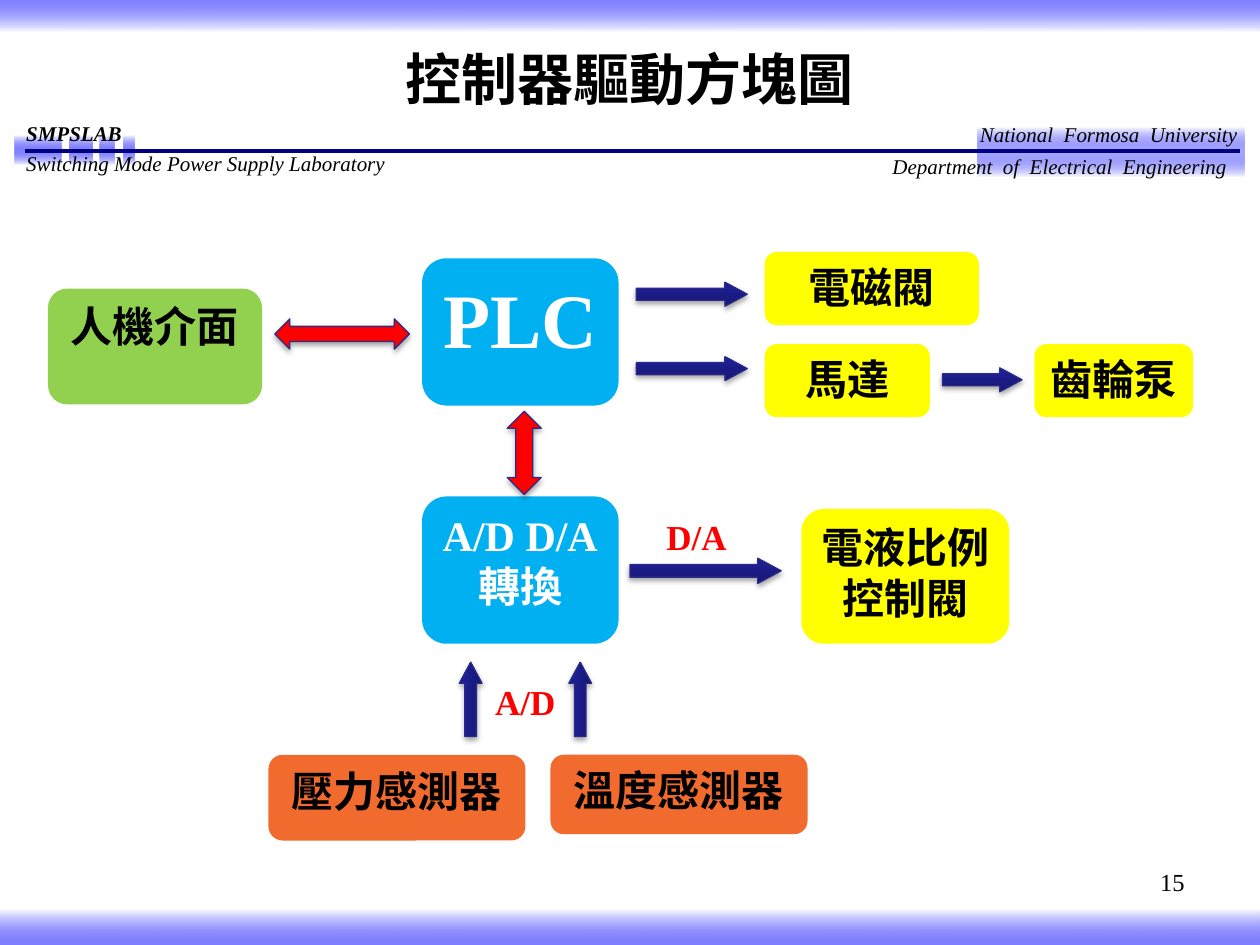
import pptx
import pptx.util
import pptx.dml.color
import pptx.enum.shapes
import pptx.enum.text
import pptx.oxml
import pptx.oxml.ns

Pt = pptx.util.Pt
SHAPE = pptx.enum.shapes.MSO_SHAPE
ALIGN = pptx.enum.text.PP_ALIGN
NAMESPACE = pptx.oxml.ns.nsdecls("a")


def color(value):
    return pptx.dml.color.RGBColor.from_string(value)


class Diagram:
    font = "Times New Roman"
    black, white, red = "000000", "FFFFFF", "FF0000"
    yellow, blue, green, orange = "FFFF00", "00B0F0", "92D050", "F16B2F"
    navy, outline = "000080", "2A2A89"
    pale = (0, "FBFBFF", 100)
    pale_end = (100, "FBFBFF", 100)
    arrow_stops = [(0, "171771", 100), (80, "1E1E93", 100), (100, "1C1C96", 100)]

    def __init__(self, page):
        self.page = page

    def shape(self, kind, frame, fill=None):
        shape = self.page.shapes.add_shape(kind, *map(Pt, frame))
        shape.shadow.inherit = False
        shape.line.fill.background()
        if fill:
            shape.fill.solid()
            shape.fill.fore_color.rgb = color(fill)
        return shape

    def gradient(self, shape, stops, angle):
        """Stops are (position %, colour, opacity %)."""
        shape.fill.gradient()
        shape.fill.gradient_angle = angle
        stop_list = shape.element.spPr.find(".//" + pptx.oxml.ns.qn("a:gsLst"))
        for stop in list(stop_list):
            stop_list.remove(stop)
        for position, value, opacity in stops:
            stop_list.append(pptx.oxml.parse_xml(
                f'<a:gs {NAMESPACE} pos="{position * 1000}"><a:srgbClr val="{value}">'
                f'<a:alpha val="{opacity * 1000}"/></a:srgbClr></a:gs>'))

    def band(self, frame, stops):
        self.gradient(self.shape(SHAPE.RECTANGLE, frame), stops, 270)

    def label(self, shape, lines, size, value, bold=False, italic=False,
              align=ALIGN.CENTER, spacing=None):
        frame = shape.text_frame
        frame.text = "\n".join(lines)
        frame.vertical_anchor = pptx.enum.text.MSO_ANCHOR.TOP
        for para in frame.paragraphs:
            para.alignment = align
            if spacing:
                para.line_spacing = spacing
            for span in para.runs:
                span.font.name = self.font
                span.font.size = Pt(size)
                span.font.bold = bold
                span.font.italic = italic
                span.font.color.rgb = color(value)
        return frame

    def text(self, frame, lines, size, value=black, wrap=True, **style):
        box = self.page.shapes.add_textbox(*map(Pt, frame))
        box.text_frame.word_wrap = wrap
        return self.label(box, lines, size, value, **style)

    def block(self, frame, name, fill, value=black, size=24):
        box = self.shape(SHAPE.FLOWCHART_ALTERNATE_PROCESS, frame, fill)
        box.text_frame.word_wrap = True
        box.text_frame.margin_left = box.text_frame.margin_right = Pt(6)
        self.label(box, [name], size, value, bold=True)

    def arrow(self, frame, rotation=0, double=False):
        kind = SHAPE.LEFT_RIGHT_ARROW if double else SHAPE.RIGHT_ARROW
        arrow = self.shape(kind, frame, self.red if double else None)
        if not double:
            arrow.adjustments[1] = 0.93
            self.gradient(arrow, self.arrow_stops, 90)
        arrow.rotation = rotation
        arrow.line.color.rgb = color(self.outline)
        arrow.line.width = Pt(0.75)
        effects = arrow.element.spPr.find(pptx.oxml.ns.qn("a:effectLst"))
        effects.append(pptx.oxml.parse_xml(
            f'<a:outerShdw {NAMESPACE} blurRad="{Pt(3.1)}" dist="{Pt(1.8)}" dir="5400000" '
            'rotWithShape="0"><a:srgbClr val="000000"><a:alpha val="35000"/></a:srgbClr>'
            '</a:outerShdw>'))

    def rule(self, left, right, top):
        line = self.page.shapes.add_connector(
            pptx.enum.shapes.MSO_CONNECTOR.STRAIGHT, Pt(left), Pt(top), Pt(right), Pt(top))
        line.line.color.rgb = color(self.navy)
        line.line.width = Pt(2)
        line.element.spPr.append(pptx.oxml.parse_xml(f"<a:effectLst {NAMESPACE}/>"))


def main():
    deck = pptx.Presentation()
    deck.slide_width, deck.slide_height = Pt(720), Pt(540)
    diagram = Diagram(deck.slides.add_slide(deck.slide_layouts[6]))
    pale, pale_end = diagram.pale, diagram.pale_end

    # Gradient bands
    for left, width in ((39.6, 13), (56.9, 8.6), (8.6, 26.6), (70.6, 6.5)):
        diagram.band((left, 77.8, width, 16.5), [pale, (50, "0000FF", 49), pale_end])
    diagram.band((0, -2, 720, 20), [(0, "0000FF", 49), pale_end])
    diagram.band((0, 520, 720, 20), [pale, (100, "0000FF", 49)])
    diagram.band((558.7, 72.7, 152.6, 28.1), [pale, (50, "0000FF", 33), pale_end])

    # Header
    school = diagram.text(
        (484.6, 62.6, 229.7, 43.2),
        ["National  Formosa  University", "Department  of  Electrical  Engineering"],
        12, italic=True, align=ALIGN.RIGHT, spacing=1.25)
    school.paragraphs[1]._p.get_or_add_pPr().set("marR", str(Pt(6)))
    diagram.rule(14.4, 708.5, 86.4)
    lab = diagram.text(
        (7.9, 54.7, 220.3, 50.4), ["SMPSLAB", "Switching Mode Power Supply Laboratory"],
        12, wrap=False, italic=True, align=ALIGN.LEFT)
    lab.margin_top = Pt(14.4)
    lab.paragraphs[0].runs[0].font.bold = True
    lab.paragraphs[1].space_before = Pt(2.5)

    # Title and page number
    diagram.text((36, 21.6, 648, 90), ["控制器驅動方塊圖"], 32, bold=True)
    diagram.text((516.2, 491.8, 167.8, 37.4), ["15"], 14, align=ALIGN.RIGHT)

    # Controller column
    diagram.block((241.2, 147.6, 112.3, 84.2), "PLC", diagram.blue, diagram.white, 44)
    diagram.block((241.2, 283.7, 112.3, 84.2), "A/D D/A轉換", diagram.blue, diagram.white)

    # Interface, actuators and sensors
    for frame, name, fill in (
        ((27.4, 164.9, 122.4, 66.2), "人機介面", diagram.green),
        ((437, 144, 122.4, 41.8), "電磁閥", diagram.yellow),
        ((437, 196.6, 94.3, 41.8), "馬達", diagram.yellow),
        ((591.1, 196.6, 90.7, 41.8), "齒輪泵", diagram.yellow),
        ((457.9, 290.9, 118.8, 77), "電液比例控制閥", diagram.yellow),
        ((153.4, 431.3, 146.9, 49), "壓力感測器", diagram.orange),
        ((314.6, 431.3, 146.9, 45.4), "溫度感測器", diagram.orange),
    ):
        diagram.block(frame, name, fill)

    # Signal arrows
    for top in (161.3, 203.8):
        diagram.arrow((363.6, top, 63.4, 13.7))
    diagram.arrow((538.6, 210.2, 45.4, 13.7))
    diagram.arrow((360, 319, 86.4, 14.4))
    for left in (247.7, 310.3):
        diagram.arrow((left, 393.1, 42.5, 13), rotation=270)
    diagram.arrow((157, 182.2, 77, 17.3), double=True)
    diagram.arrow((275.8, 249.1, 47.5, 19.4), rotation=90, double=True)

    # Conversion labels
    for left, top, name in ((373.7, 290.9, "D/A"), (275.8, 385.2, "A/D")):
        diagram.text((left, top, 49.7, 31.7), [name], 20, diagram.red,
                     wrap=False, bold=True, align=ALIGN.LEFT)

    deck.save("out.pptx")


if __name__ == "__main__":
    main()
